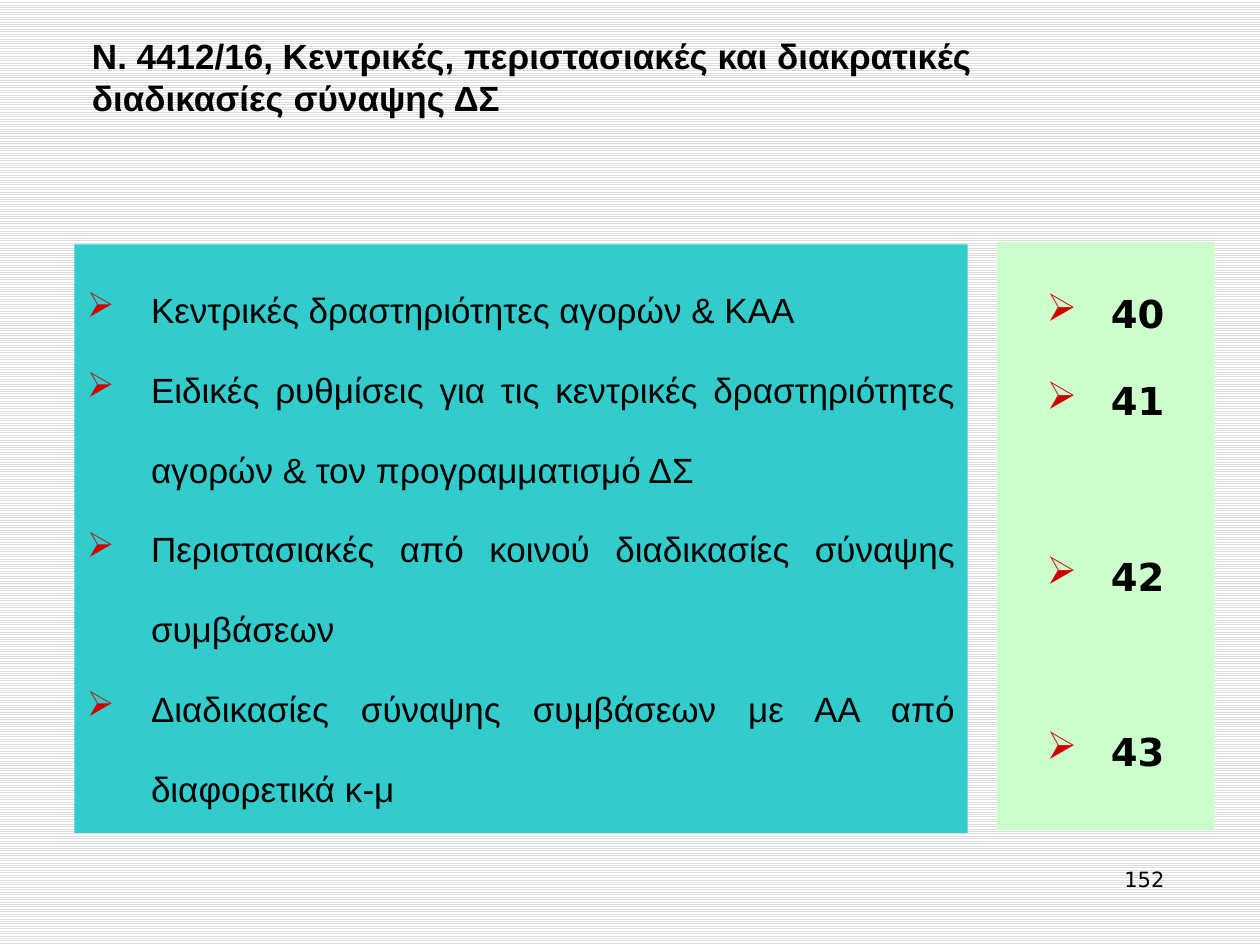
import pptx
import pptx.util
import pptx.dml.color
import pptx.enum.dml
import pptx.enum.shapes
import pptx.enum.text
import lxml.etree

Pt = pptx.util.Pt
RGB = pptx.dml.color.RGBColor
Align = pptx.enum.text.PP_ALIGN
Anchor = pptx.enum.text.MSO_ANCHOR

BLACK = RGB(0x00, 0x00, 0x00)
WHITE = RGB(0xFF, 0xFF, 0xFF)
GREY = RGB(0xDD, 0xDD, 0xDD)
TEAL = RGB(0x33, 0xCC, 0xCC)
GREEN = RGB(0xCC, 0xFF, 0xCC)
RED = RGB(0xCC, 0x00, 0x00)

SANS = "Arial"
WIDE = "DejaVu Sans"
INDENT = Pt(36.72)
LEADING = 1.9
SKIP = Pt(50)  # one empty line in the number list

TITLE = "Ν. 4412/16, Κεντρικές, περιστασιακές και διακρατικές διαδικασίες σύναψης ΔΣ"
# Each entry: text, space before
TOPICS = [
    ("Κεντρικές δραστηριότητες αγορών & ΚΑΑ", 0),
    ("Ειδικές ρυθμίσεις για τις κεντρικές δραστηριότητες αγορών & τον προγραμματισμό ΔΣ", 0),
    ("Περιστασιακές από κοινού διαδικασίες σύναψης συμβάσεων", 0),
    ("Διαδικασίες σύναψης συμβάσεων με ΑΑ από διαφορετικά κ-μ", 0),
]
NUMBERS = [("40", 0), ("41", 0), ("42", SKIP), ("43", SKIP)]


def style(para, face, size, bold, align):
    para.alignment = align
    font = para.font
    font.name, font.size, font.bold = face, Pt(size), bold
    font.color.rgb = BLACK


def bullet(para):
    props = para._p.get_or_add_pPr()
    props.set("marL", str(INDENT))
    props.set("indent", str(-INDENT))
    qn = pptx.oxml.ns.qn
    tint = lxml.etree.SubElement(props, qn("a:buClr"))
    lxml.etree.SubElement(tint, qn("a:srgbClr"), val=str(RED))
    lxml.etree.SubElement(props, qn("a:buChar"), char="➢")


def paint(slide):
    fill = slide.background.fill
    fill.patterned()
    fill.pattern = pptx.enum.dml.MSO_PATTERN.LIGHT_HORIZONTAL
    fill.fore_color.rgb = GREY
    fill.back_color.rgb = WHITE


def add_title(slide):
    title = slide.shapes.title
    title.left, title.top = Pt(45.36), Pt(23.76)
    title.width, title.height = Pt(630), Pt(47.52)
    frame = title.text_frame
    frame.text = TITLE
    frame.auto_size = pptx.enum.text.MSO_AUTO_SIZE.NONE
    frame.vertical_anchor = Anchor.BOTTOM
    style(frame.paragraphs[0], SANS, 20, True, Align.LEFT)


def add_panel(slide, left, top, width, fill, items, face, size, bold, align):
    kind = pptx.enum.shapes.MSO_SHAPE.RECTANGLE
    panel = slide.shapes.add_shape(kind, Pt(left), Pt(top), Pt(width), Pt(336.24))
    panel.shadow.inherit = False
    panel.fill.solid()
    panel.fill.fore_color.rgb = fill
    panel.line.fill.background()
    frame = panel.text_frame
    frame.word_wrap = True
    frame.vertical_anchor = Anchor.TOP
    for i, (text, gap) in enumerate(items):
        para = frame.add_paragraph() if i else frame.paragraphs[0]
        para.text = text
        bullet(para)
        para.line_spacing = LEADING
        para.space_before = gap
        style(para, face, size, bold, align)


def add_page(slide, text):
    box = slide.shapes.add_textbox(Pt(516.24), Pt(491.76), Pt(156.24), Pt(37.44))
    box.text_frame.word_wrap = True
    para = box.text_frame.paragraphs[0]
    para.text = text
    style(para, WIDE, 12, False, Align.RIGHT)


def main():
    deck = pptx.Presentation()
    deck.slide_width, deck.slide_height = Pt(720), Pt(540)
    slide = deck.slides.add_slide(deck.slide_layouts.get_by_name("Title Only"))
    paint(slide)
    add_page(slide, "152")
    add_title(slide)
    # Topics on the left, article numbers on the right
    add_panel(slide, 42.48, 139.68, 510.48, TEAL, TOPICS, SANS, 20, False, Align.JUSTIFY)
    add_panel(slide, 569.52, 138.24, 124.56, GREEN, NUMBERS, WIDE, 22, True, Align.CENTER)
    deck.save("out.pptx")


if __name__ == "__main__":
    main()
